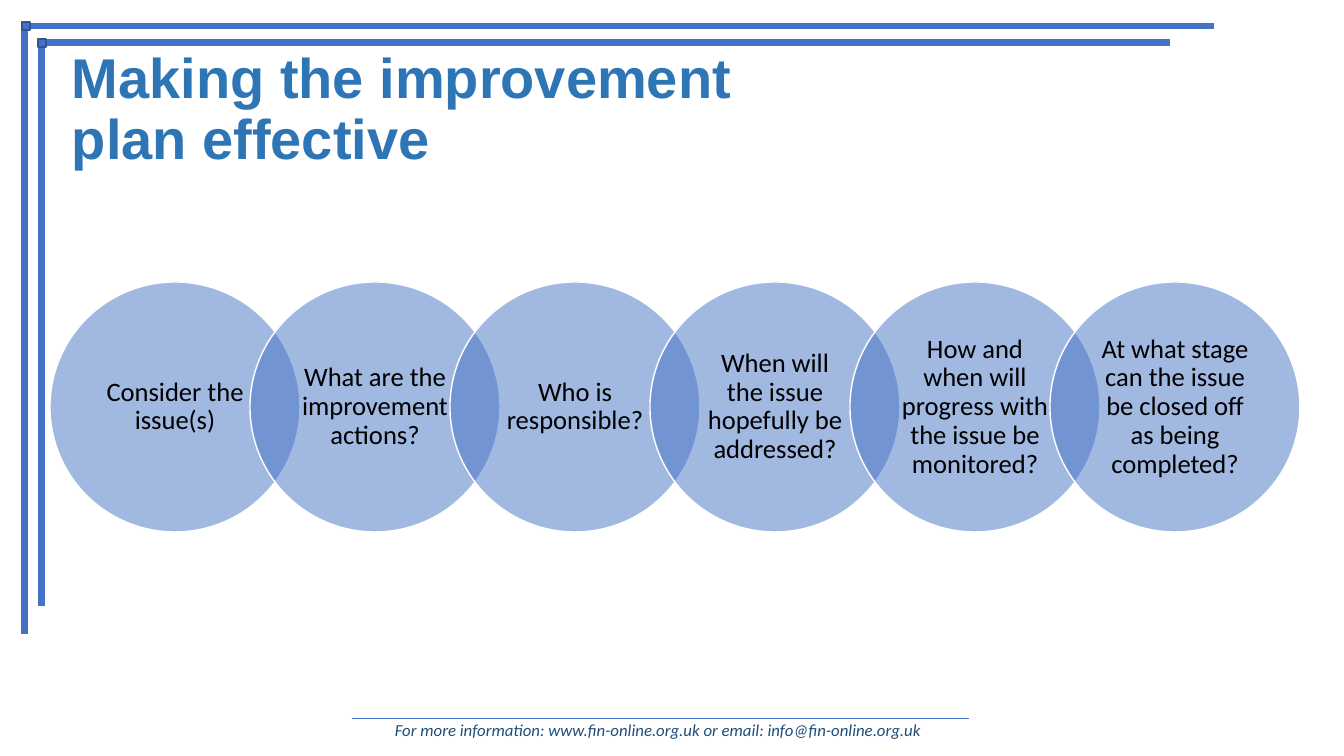
from lxml.etree import SubElement
from pptx import Presentation
from pptx.dml.color import RGBColor
from pptx.enum.shapes import MSO_CONNECTOR, MSO_SHAPE
from pptx.enum.text import MSO_ANCHOR, PP_ALIGN
from pptx.oxml.ns import qn
from pptx.util import Pt

SCALE = 12192000 / 1344  # EMU per px
COLORS = {
    "blue": "4472C4",
    "edge": "325491",
    "title": "2E75B6",
    "footer": "1F4E79",
    "white": "FFFFFF",
    "black": "000000",
}

# Fonts
TITLE = {"name": "Arial", "size": Pt(40), "bold": True}
FOOTER = {"name": "Calibri", "size": Pt(12), "italic": True}
LABEL = {"name": "Calibri", "size": Pt(19)}

# Frame bars: x1, y1, x2, y2, width in points
BARS = [
    (26, 26, 1214, 26, 5),
    (42, 39, 42, 606, 5),
    (25, 22, 25, 634, 5),
    (352, 718, 969, 718, 0.5),
    (43, 43, 1170, 43, 5),
]
CORNERS = [(22, 22), (38, 39)]

# Chain of circles
STEPS = [
    "Consider the issue(s)",
    "What are the improvement actions?",
    "Who is responsible?",
    "When will the issue hopefully be addressed?",
    "How and when will progress with the issue be monitored?",
    "At what stage can the issue be closed off as being completed?",
]
LEFT, TOP, SIZE, PITCH = 50, 282, 250, 200
INSET = 37  # circle edge to label box


def px(*values):
    return [round(value * SCALE) for value in values]


def color(name):
    return RGBColor.from_string(COLORS[name])


def assign(target, values):
    for key, value in values.items():
        setattr(target, key, value)


def add_bar(slide, x1, y1, x2, y2, width):
    bar = slide.shapes.add_connector(MSO_CONNECTOR.STRAIGHT, *px(x1, y1, x2, y2))
    bar.line.color.rgb = color("blue")
    bar.line.width = Pt(width)
    SubElement(bar.element.spPr, qn("a:effectLst"))


def add_shape(slide, kind, box, edge, alpha=None):
    shape = slide.shapes.add_shape(kind, *px(*box))
    shape.shadow.inherit = False
    shape.fill.solid()
    shape.fill.fore_color.rgb = color("blue")
    shape.line.color.rgb = color(edge)
    shape.line.width = Pt(1)
    if alpha:
        tint = shape.element.spPr.find(qn("a:solidFill"))[0]
        SubElement(tint, qn("a:alpha"), val=str(alpha * 1000))


def add_text(slide, text, box, font, ink, align=PP_ALIGN.CENTER, pad=(10, 5)):
    frame = slide.shapes.add_textbox(*px(*box)).text_frame
    side, end = px(*pad)
    assign(frame, {
        "word_wrap": True,
        "vertical_anchor": MSO_ANCHOR.MIDDLE,
        "margin_left": side,
        "margin_right": side,
        "margin_top": end,
        "margin_bottom": end,
    })
    para = frame.paragraphs[0]
    assign(para, {"text": text, "alignment": align, "line_spacing": 0.9})
    assign(para.runs[0].font, font)
    para.runs[0].font.color.rgb = color(ink)


def add_step(slide, index, text):
    left = LEFT + index * PITCH
    add_shape(slide, MSO_SHAPE.OVAL, (left, TOP, SIZE, SIZE), "white", alpha=50)
    side = SIZE - 2 * INSET
    box = (left + INSET, TOP + INSET, side, side)
    add_text(slide, text, box, LABEL, "black", pad=(14, 3))


def main():
    deck = Presentation()
    deck.slide_width, deck.slide_height = px(1344, 756)
    slide = deck.slides.add_slide(deck.slide_layouts[6])

    # Frame and footer
    for bar in BARS:
        add_bar(slide, *bar)
    for left, top in CORNERS:
        add_shape(slide, MSO_SHAPE.RECTANGLE, (left, top, 8, 8), "edge")
    note = "For more information: www.fin-online.org.uk or email: info@fin-online.org.uk"
    add_text(slide, note, (243, 711, 830, 40), FOOTER, "footer")

    # Steps
    for index, text in enumerate(STEPS):
        add_step(slide, index, text)

    # Title
    add_text(slide, "Making the improvement plan effective", (62, 38, 804, 146),
             TITLE, "title", PP_ALIGN.LEFT)

    deck.save("out.pptx")


if __name__ == "__main__":
    main()
